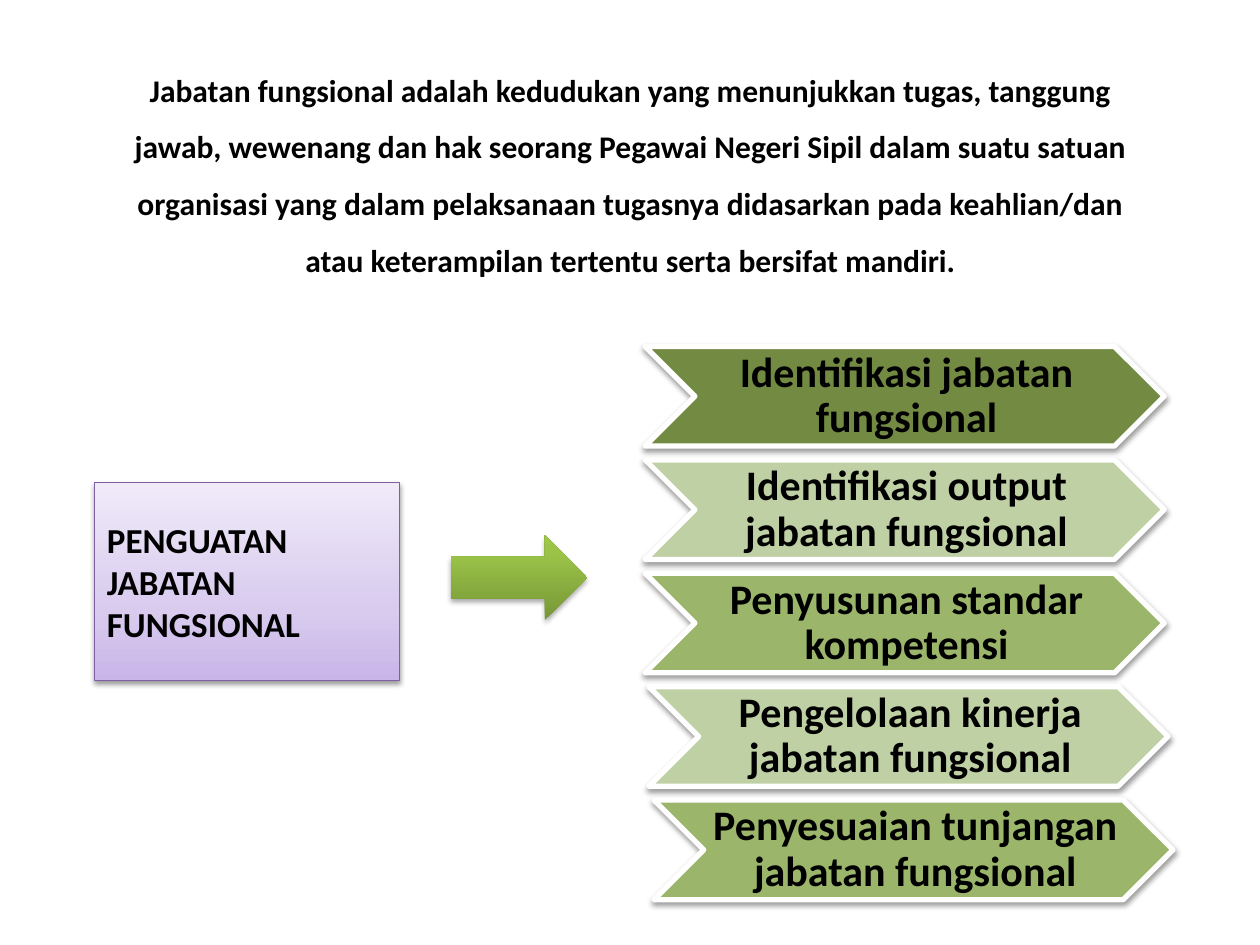
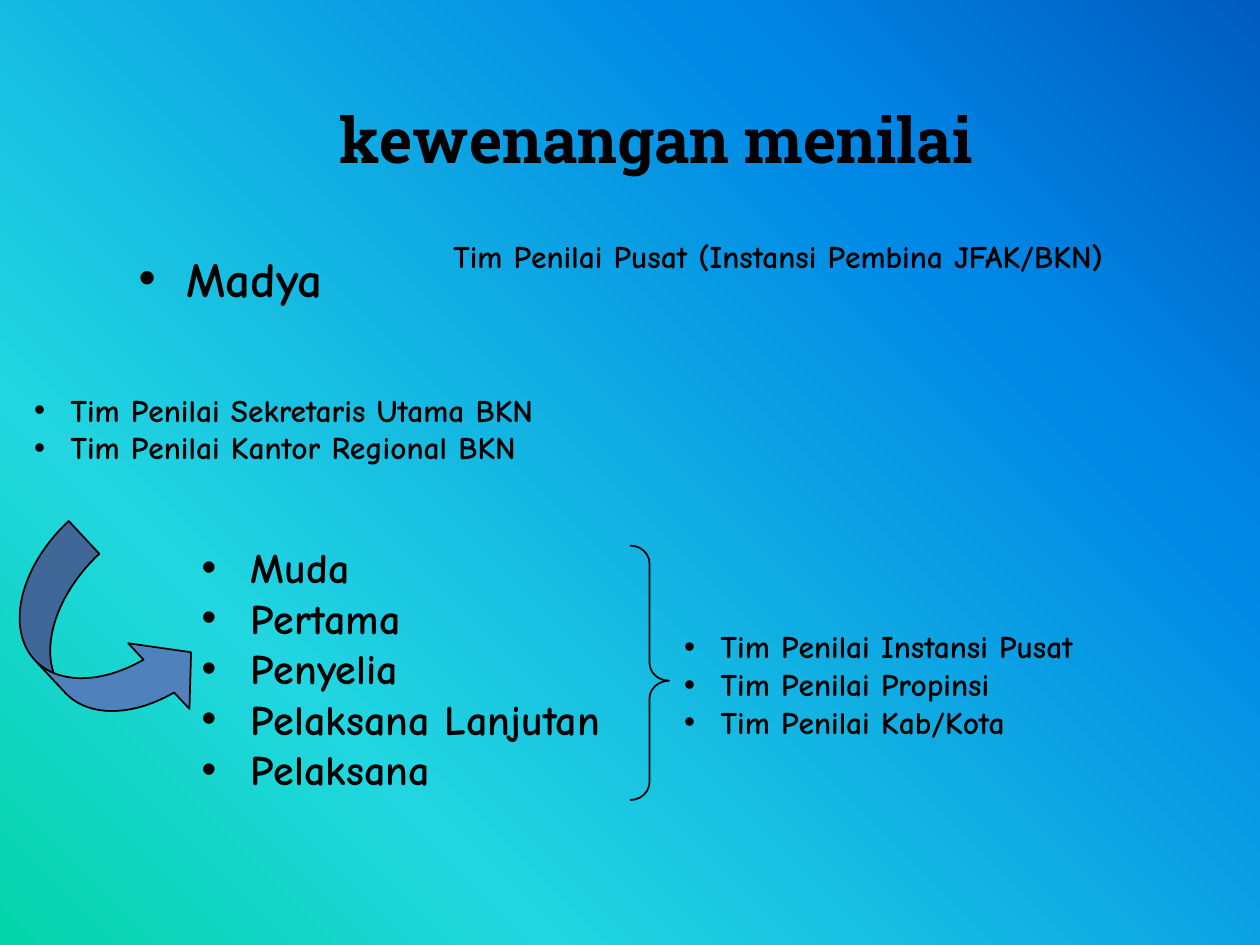
"""Build two slides on functional posts and who may assess them."""
from dataclasses import dataclass

from lxml import etree
from pptx import Presentation
from pptx import util as u
from pptx.dml.color import RGBColor
from pptx.enum import shapes, text
from pptx.oxml import ns

PX = 9144
KIND = shapes.MSO_SHAPE
ALIGN = text.PP_ALIGN
MID = text.MSO_ANCHOR.MIDDLE


@dataclass(frozen=True)
class Theme:
    """Colours, fonts and type sizes."""
    ink: str = "000000"
    paper: str = "FFFFFF"
    glow: str = "FFFF00"
    blue: str = "4F81BD"
    edge: str = "7D60A0"
    dark: str = "738A42"
    green: str = "9BB66B"
    pale: str = "BFD0A4"
    lilac: tuple = ((0, "C9B5E8"), (35, "D8CBEE"), (100, "F0EAF9"))
    leaf: tuple = ((0, "779737"), (80, "9BC348"), (100, "9DC746"))
    sea: tuple = ((0, "03D4A8"), (25, "21D6E0"), (75, "0087E6"), (100, "005CBF"))
    plain: str = "Calibri"
    comic: str = "Comic Neue"
    slab: str = "Roboto Slab"
    small: int = 18
    box: int = 20
    mid: int = 24
    large: int = 28
    head: int = 36


def add(node, tag, **attrs):
    """Append a child element with the given attributes."""
    return etree.SubElement(node, ns.qn(tag), {k: str(v) for k, v in attrs.items()})


def blend(fill, root, stops, angle):
    """Give a fill its gradient stops and angle."""
    fill.gradient()
    grad = root.find(".//" + ns.qn("a:gradFill"))
    for child in list(grad):
        grad.remove(child)
    row = add(grad, "a:gsLst")
    for pos, hue in stops:
        add(add(row, "a:gs", pos=pos * 1000), "a:srgbClr", val=hue)
    add(grad, "a:lin", ang=angle * 60000, scaled=0)


class Deck:
    """Hold the style and the current slide."""

    def __init__(self, theme):
        """Start an empty deck of 10 by 7.5 inches."""
        self.theme = theme
        self.show = Presentation()
        self.show.slide_width, self.show.slide_height = 1000 * PX, 750 * PX

    def page(self, layout, stops=None):
        """Start a slide, with a gradient behind it if stops are given."""
        self.slide = self.show.slides.add_slide(self.show.slide_layouts[layout])
        if stops:
            blend(self.slide.background.fill, self.slide.element, stops, 315)

    def place(self, item, spot):
        """Move a placeholder to its spot."""
        item.left, item.top, item.width, item.height = (n * PX for n in spot)

    def label(self, item, words, size, font, align=ALIGN.LEFT,
              anchor=text.MSO_ANCHOR.TOP, space=1.0):
        """Set and format the text of an item."""
        frame = item.text_frame
        frame.text = words
        frame.word_wrap = True
        frame.auto_size = text.MSO_AUTO_SIZE.NONE
        frame.vertical_anchor = anchor
        for para in frame.paragraphs:
            para.alignment, para.line_spacing = align, space
            para.space_before = u.Pt(0)
            for run in para.runs:
                run.font.size, run.font.name, run.font.bold = u.Pt(size), font, True
                run.font.color.rgb = RGBColor.from_string(self.theme.ink)
        return frame

    def title(self, words, spot, size, font, space=1.0):
        """Fill the title placeholder."""
        item = self.slide.shapes.title
        self.place(item, spot)
        return self.label(item, words, size, font, ALIGN.CENTER, space=space)

    def points(self, index, words, spot, size, indent):
        """Fill a body placeholder with a bulleted list."""
        item = self.slide.placeholders[index]
        self.place(item, spot)
        frame = self.label(item, "\n".join(words), size, self.theme.comic)
        for para in frame.paragraphs:
            props = para._p.get_or_add_pPr()
            props.set("marL", str(indent * PX))
            props.set("indent", str(-indent * PX))
            add(props, "a:buChar", char="•")

    def note(self, words, spot, size):
        """Add a text box."""
        item = self.slide.shapes.add_textbox(*(n * PX for n in spot))
        self.label(item, words, size, self.theme.comic)

    def shape(self, kind, spot, fill=None, line=None, width=1, drop=0, turn=0, adjust=()):
        """Add a preset shape; drop is the length of its shadow in EMU."""
        item = self.slide.shapes.add_shape(kind, *(n * PX for n in spot))
        item.rotation = turn
        for i, part in enumerate(adjust):
            item.adjustments[i] = part
        if fill is None:
            item.fill.background()
        elif isinstance(fill, str):
            item.fill.solid()
            item.fill.fore_color.rgb = RGBColor.from_string(fill)
        else:
            blend(item.fill, item.element, fill, 270)
        if line:
            item.line.color.rgb = RGBColor.from_string(line)
            item.line.width = u.Pt(width)
        else:
            item.line.fill.background()
        item.shadow.inherit = False
        if drop:
            cast = add(item.element.find(".//" + ns.qn("a:effectLst")), "a:outerShdw",
                       blurRad=40000, dist=drop, dir=5400000, rotWithShape=0)
            add(add(cast, "a:srgbClr", val=self.theme.ink), "a:alpha",
                val=38000 if drop == 20000 else 35000)
        return item


def posts(deck):
    """Draw the slide on strengthening functional posts."""
    look = deck.theme
    deck.page(5)
    deck.title("Jabatan fungsional adalah kedudukan yang menunjukkan tugas, tanggung "
               "jawab, wewenang dan hak seorang Pegawai Negeri Sipil dalam suatu satuan "
               "organisasi yang dalam pelaksanaan tugasnya didasarkan pada keahlian/dan "
               "atau keterampilan tertentu serta bersifat mandiri.",
               (83, 36, 835, 192), look.small, look.plain, 1.5)
    goal = deck.shape(KIND.RECTANGLE, (75, 383, 242, 157), look.lilac, look.edge, 0.75, 20000)
    deck.label(goal, "PENGUATAN JABATAN FUNGSIONAL", look.box, look.plain, anchor=MID)
    deck.shape(KIND.RIGHT_ARROW, (358, 425, 108, 67), look.leaf, drop=23000)
    steps = (("Identifikasi jabatan fungsional", look.dark, 512),
             ("Identifikasi output jabatan fungsional", look.pale, 512),
             ("Penyusunan standar kompetensi", look.green, 512),
             ("Pengelolaan kinerja jabatan fungsional", look.pale, 515),
             ("Penyesuaian tunjangan jabatan fungsional", look.green, 519))
    for i, (words, hue, left) in enumerate(steps):
        step = deck.shape(KIND.CHEVRON, (left, 275 + 90 * i, 412, 79), hue,
                          look.paper, 3, 20000)
        frame = deck.label(step, words, look.mid, look.plain, ALIGN.CENTER, MID, 0.9)
        frame.margin_left, frame.margin_right = 3 * PX, 0
        frame.margin_top = frame.margin_bottom = 2 * PX


def powers(deck):
    """Draw the slide on who may assess which rank."""
    look = deck.theme
    deck.page(4, look.sea)
    frame = deck.title("kewenangan menilai", (233, 75, 576, 83), look.head, look.slab)
    props = frame.paragraphs[0].runs[0]._r.get_or_add_rPr()
    rim = add(props, "a:ln", w=12700)
    add(add(rim, "a:solidFill"), "a:srgbClr", val=look.glow)
    props.insert(0, rim)
    deck.points(1, ["Madya"], (100, 192, 200, 57), look.large, 38)
    deck.note("Tim Penilai Pusat (Instansi Pembina JFAK/BKN)", (350, 183, 583, 91), look.small)
    deck.points(2, ["Tim Penilai Sekretaris Utama BKN", "Tim Penilai Kantor Regional BKN"],
                (17, 305, 617, 91), look.small, 29)
    deck.shape(KIND.CURVED_RIGHT_ARROW, (33, 422, 95, 178), look.blue, look.ink,
               turn=317, adjust=(0.375, 0.75, 0.333))
    deck.points(3, ["Muda", "Pertama", "Penyelia", "Pelaksana Lanjutan", "Pelaksana"],
                (150, 425, 367, 212), look.mid, 39)
    deck.points(4, ["Tim Penilai Instansi Pusat", "Tim Penilai Propinsi",
                    "Tim Penilai Kab/Kota"], (533, 493, 470, 101), look.small, 29)
    deck.shape(KIND.RIGHT_BRACE, (500, 433, 31, 202), line=look.ink, adjust=(0.458, 0.531))


def main():
    """Build and save the deck."""
    deck = Deck(Theme())
    posts(deck)
    powers(deck)
    deck.show.save("out.pptx")


if __name__ == "__main__":
    main()
